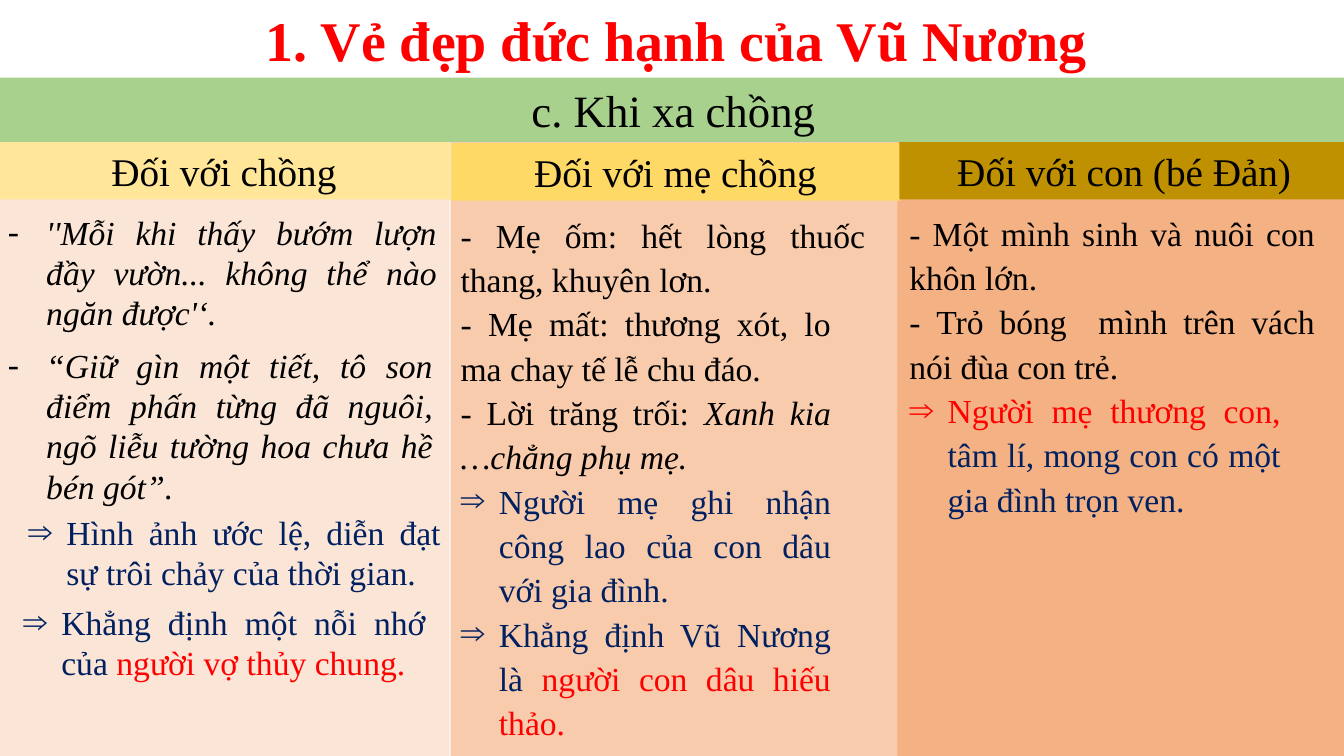
from dataclasses import dataclass

from lxml import etree
from pptx import Presentation
from pptx import util as u
from pptx.dml.color import RGBColor
from pptx.enum import shapes, text
from pptx.oxml import ns
from pptx.slide import Slide

FONT = "Times New Roman"
WHITE = RGBColor(0xFF, 0xFF, 0xFF)
BLACK = RGBColor(0x00, 0x00, 0x00)
RED = RGBColor(0xFF, 0x00, 0x00)
NAVY = RGBColor(0x00, 0x20, 0x60)
GREEN = RGBColor(0xA9, 0xD1, 0x8E)
PALE_ORANGE = RGBColor(0xFB, 0xE5, 0xD6)
LIGHT_ORANGE = RGBColor(0xF8, 0xCB, 0xAD)
ORANGE = RGBColor(0xF4, 0xB1, 0x83)
PALE_GOLD = RGBColor(0xFF, 0xE6, 0x99)
LIGHT_GOLD = RGBColor(0xFF, 0xD9, 0x66)
DARK_GOLD = RGBColor(0xBF, 0x90, 0x00)
INDENT = u.Inches(0.38)


@dataclass(frozen=True)
class Box:
    left: float
    top: float
    width: float
    height: float

    def lengths(self) -> list[u.Length]:
        return [u.Inches(v) for v in (self.left, self.top, self.width, self.height)]


@dataclass(frozen=True)
class Panel:
    box: Box
    fill: RGBColor
    label: str = ""
    size: int = 28
    color: RGBColor = BLACK
    bold: bool = False


@dataclass(frozen=True)
class Phrase:
    words: str
    color: RGBColor = BLACK
    italic: bool = False


@dataclass(frozen=True)
class Point:
    phrases: list[Phrase]
    bullet: str = ""
    right: float = 0


@dataclass(frozen=True)
class Note:
    box: Box
    points: list[Point]
    spacing: float = 1.0


PANELS = [
    Panel(Box(0.04, 0, 13.33, 0.77), WHITE, "1. Vẻ đẹp đức hạnh của Vũ Nương", 40, RED, True),
    Panel(Box(-0.01, 0.77, 13.38, 0.64), GREEN, "c. Khi xa chồng", 32),
    Panel(Box(-0.01, 1.41, 4.47, 6.09), PALE_ORANGE),
    Panel(Box(4.47, 1.41, 4.47, 6.09), LIGHT_ORANGE),
    Panel(Box(8.9, 1.41, 4.47, 6.09), ORANGE),
    Panel(Box(-0.02, 1.41, 4.48, 0.57), PALE_GOLD, "Đối với chồng"),
    Panel(Box(4.47, 1.42, 4.46, 0.57), LIGHT_GOLD, "Đối với mẹ chồng"),
    Panel(Box(8.92, 1.41, 4.46, 0.57), DARK_GOLD, "Đối với con (bé Đản)"),
]

NOTES = [
    Note(Box(-0.02, 2.05, 4.59, 1.31), [
        Point([Phrase("''Mỗi khi thấy bướm lượn đầy vườn... không thể nào ngăn được'‘.", italic=True)],
              "-", 0.14),
    ]),
    Note(Box(-0.02, 3.37, 4.59, 1.72), [
        Point([Phrase("“Giữ gìn một tiết, tô son điểm phấn từng đã nguôi, "
                      "ngõ liễu tường hoa chưa hề bén gót”.", italic=True)], "-", 0.18),
    ]),
    Note(Box(0.18, 5.03, 4.29, 0.91), [
        Point([Phrase("Hình ảnh ước lệ, diễn đạt sự trôi chảy của thời gian.", NAVY)], "⇒"),
    ]),
    Note(Box(0.13, 5.92, 4.19, 1.31), [
        Point([Phrase("Khẳng  định  một  nỗi  nhớ của ", NAVY),
               Phrase("người vợ thủy chung.", RED)], "⇒"),
    ]),
    Note(Box(4.47, 2.04, 4.44, 5.43), [
        Point([Phrase("- Mẹ ốm: hết lòng thuốc thang, khuyên lơn.")], right=0.23),
        Point([Phrase("- Mẹ mất: thương xót, lo ma chay tế lễ chu đáo.")], right=0.57),
        Point([Phrase("- Lời trăng trối: "), Phrase("Xanh kia …chẳng phụ mẹ.", italic=True)], right=0.57),
        Point([Phrase("Người mẹ ghi nhận công lao của con dâu với gia đình.", NAVY)], "⇒", 0.57),
        Point([Phrase("Khẳng định Vũ Nương là ", NAVY),
               Phrase("người con dâu hiếu thảo.", RED)], "⇒", 0.57),
    ], 1.1),
    Note(Box(8.92, 2.02, 4.44, 3.21), [
        Point([Phrase("- Một mình sinh và nuôi con khôn lớn.")], right=0.22),
        Point([Phrase("- ", italic=True), Phrase("Trỏ bóng  mình trên vách nói đùa con trẻ.")], right=0.22),
        Point([Phrase("Người mẹ thương con, ", RED),
               Phrase("tâm lí, mong con có một gia đình trọn ven.", NAVY)], "⇒", 0.56),
    ], 1.1),
]


def draw_panel(slide: Slide, panel: Panel) -> None:
    shape = slide.shapes.add_shape(shapes.MSO_SHAPE.RECTANGLE, *panel.box.lengths())
    shape.shadow.inherit = False
    shape.fill.solid()
    shape.fill.fore_color.rgb = panel.fill
    shape.line.fill.background()
    if panel.label:
        shape.text_frame.word_wrap = True
        paragraph = shape.text_frame.paragraphs[0]
        paragraph.text = panel.label
        paragraph.alignment = text.PP_ALIGN.CENTER
        paragraph.font.name = FONT
        paragraph.font.size = u.Pt(panel.size)
        paragraph.font.bold = panel.bold
        paragraph.font.color.rgb = panel.color


def draw_note(slide: Slide, note: Note) -> None:
    frame = slide.shapes.add_textbox(*note.box.lengths()).text_frame
    frame.word_wrap = True
    frame.auto_size = text.MSO_AUTO_SIZE.SHAPE_TO_FIT_TEXT
    for index, point in enumerate(note.points):
        paragraph = frame.add_paragraph() if index else frame.paragraphs[0]
        properties = paragraph._p.get_or_add_pPr()
        properties.set("marR", str(u.Inches(point.right)))
        if point.bullet:
            properties.set("marL", str(INDENT))
            properties.set("indent", str(-INDENT))
            etree.SubElement(properties, ns.qn("a:buFont"), typeface=FONT)
            etree.SubElement(properties, ns.qn("a:buChar"), char=point.bullet)
        paragraph.alignment = text.PP_ALIGN.JUSTIFY
        paragraph.line_spacing = note.spacing
        paragraph.font.name = FONT
        paragraph.font.size = u.Pt(24)
        for phrase in point.phrases:
            run = paragraph.add_run()
            run.text = phrase.words
            font = paragraph.font if len(point.phrases) == 1 else run.font
            font.color.rgb = phrase.color
            font.italic = phrase.italic


def main() -> None:
    presentation = Presentation()
    presentation.slide_width = u.Inches(13.33)
    presentation.slide_height = u.Inches(7.5)
    slide = presentation.slides.add_slide(presentation.slide_layouts[6])
    for panel in PANELS:
        draw_panel(slide, panel)
    for note in NOTES:
        draw_note(slide, note)
    presentation.save("out.pptx")


if __name__ == "__main__":
    main()
